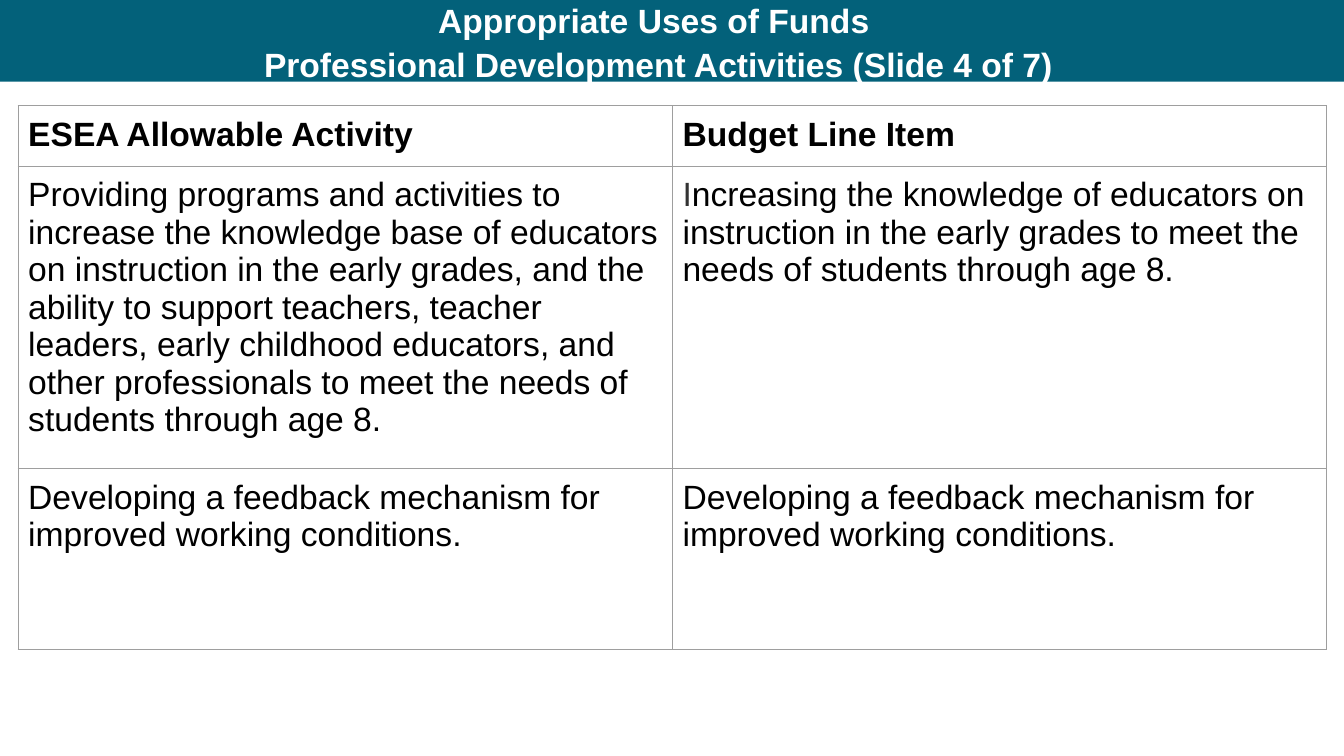
from lxml import etree
from pptx import Presentation
from pptx import util as u
from pptx.dml.color import RGBColor
from pptx.enum import shapes, text
from pptx.oxml import ns

TEAL = RGBColor(0x03, 0x61, 0x7A)
WHITE = RGBColor(0xFF, 0xFF, 0xFF)
BLACK = RGBColor(0x00, 0x00, 0x00)
DARK = RGBColor(0x33, 0x33, 0x33)
GREY = RGBColor(0x9E, 0x9E, 0x9E)
FONT, SIZE = "Arial", u.Pt(24)
PAD = u.Inches(0.1)

TITLE = ["Appropriate Uses of Funds ",
         "Professional Development Activities (Slide 4 of 7)"]
FEEDBACK = "Developing a feedback mechanism for improved working conditions."
# Each cell is a list of (words, colour) runs.
ROWS = [
    [[("ESEA Allowable Activity", BLACK)], [("Budget Line Item", BLACK)]],
    [[("Providing programs and activities to increase the knowledge base of "
       "educators on instruction in the early grades, and the ability to "
       "support teachers, teacher leaders, early childhood educators, and "
       "other professionals to meet the needs of students through age 8.",
       BLACK)],
     [("I", DARK),
      ("ncreasing the knowledge of educators on instruction in the early "
       "grades to meet the needs of students through age 8.", BLACK)]],
    [[(FEEDBACK, BLACK)], [(FEEDBACK, BLACK)]],
]
HEIGHTS = [0.57, 2.8, 1.79]


def add_run(para, words, color, bold):
    run = para.add_run()
    run.text = words
    font = run.font
    font.name, font.size, font.bold = FONT, SIZE, bold
    font.color.rgb = color


def add_edges(cell):
    """Draw a thin grey line on all four sides of a cell."""
    props = cell._tc.get_or_add_tcPr()
    for side in "LRTB":
        line = etree.SubElement(props, ns.qn("a:ln" + side), w=str(u.Pt(0.75)))
        fill = etree.SubElement(line, ns.qn("a:solidFill"))
        etree.SubElement(fill, ns.qn("a:srgbClr"), val=str(GREY))


def add_header(slide, left, top, width, height):
    band = slide.shapes.add_shape(
        shapes.MSO_SHAPE.RECTANGLE, left, top, width, height)
    band.shadow.inherit = False
    band.fill.solid()
    band.fill.fore_color.rgb = TEAL
    band.line.fill.background()

    inset = u.Inches(0.37)
    box = slide.shapes.add_textbox(
        left + inset, top, u.Inches(12.32), height)
    frame = box.text_frame
    frame.word_wrap = True
    frame.vertical_anchor = text.MSO_ANCHOR.TOP
    frame.margin_top = frame.margin_bottom = 0
    for i, words in enumerate(TITLE):
        para = frame.add_paragraph() if i else frame.paragraphs[0]
        para.alignment = text.PP_ALIGN.CENTER
        para.space_before = u.Pt(2.5 * i)
        add_run(para, words, WHITE, True)


def add_grid(slide, left, top, width, height):
    count = len(ROWS[0])
    table = slide.shapes.add_table(
        len(ROWS), count, left, top, width, height).table
    table.horz_banding = False
    for col in table.columns:
        col.width = width // count
    for r, (row, share) in enumerate(zip(ROWS, HEIGHTS)):
        table.rows[r].height = int(height * share / sum(HEIGHTS))
        for c, runs in enumerate(row):
            cell = table.cell(r, c)
            cell.margin_left = cell.margin_right = PAD
            cell.margin_top = cell.margin_bottom = PAD
            add_edges(cell)
            cell.fill.background()
            for words, color in runs:
                add_run(cell.text_frame.paragraphs[0], words, color, r == 0)


def main():
    deck = Presentation()
    deck.slide_width, deck.slide_height = u.Inches(13.33), u.Inches(7.5)
    slide = deck.slides.add_slide(deck.slide_layouts[6])
    add_header(slide, 0, 0, deck.slide_width, u.Inches(0.81))
    add_grid(slide, u.Inches(0.18), u.Inches(1.05),
             u.Inches(12.98), u.Inches(sum(HEIGHTS)))
    deck.save("out.pptx")


if __name__ == "__main__":
    main()
